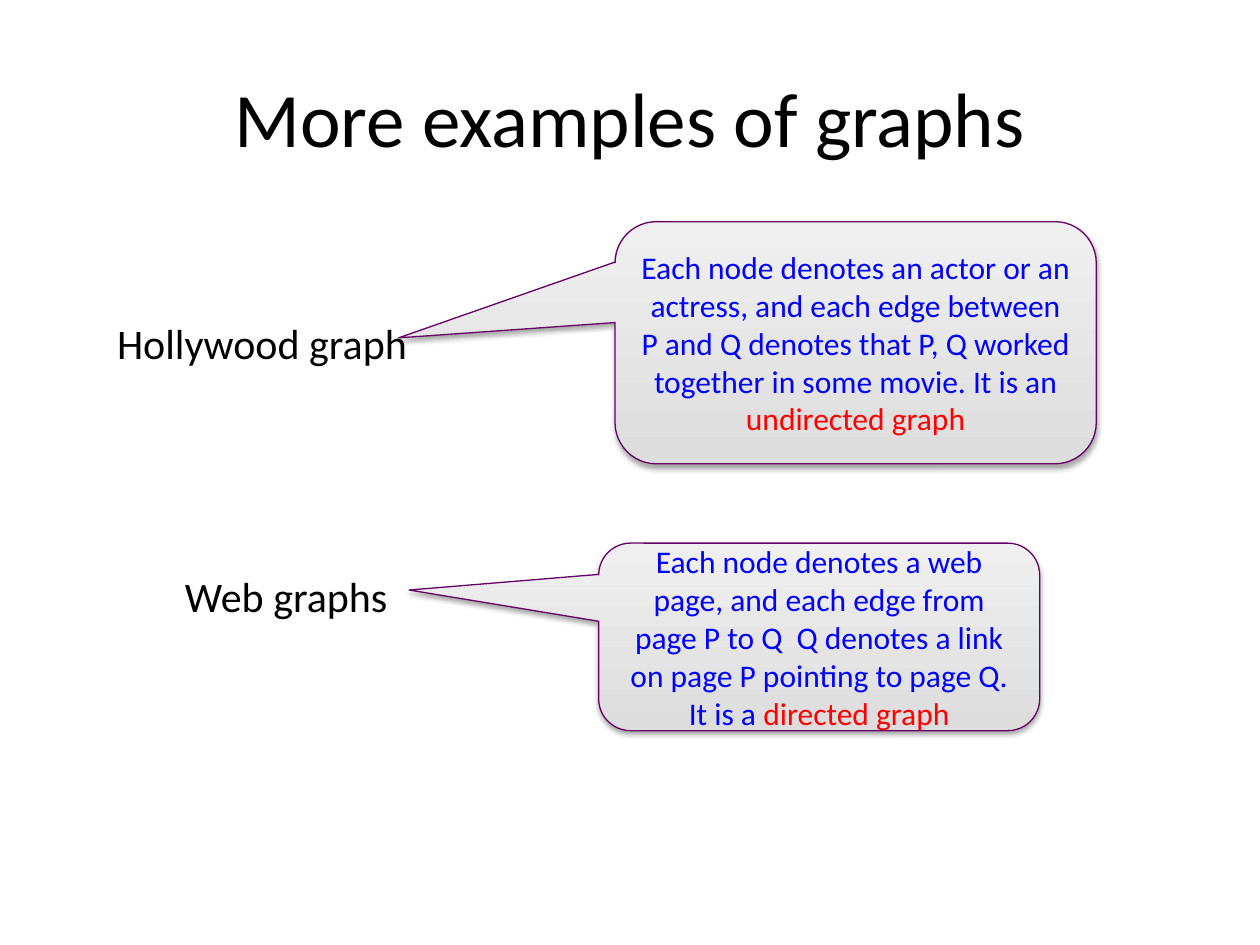
import typing

import pptx
import pptx.dml.color
import pptx.enum.shapes
import pptx.enum.text
import pptx.oxml
import pptx.oxml.ns
import pptx.util

Cm = pptx.util.Cm
Pt = pptx.util.Pt
RGBColor = pptx.dml.color.RGBColor
Align = pptx.enum.text.PP_ALIGN
Anchor = pptx.enum.text.MSO_ANCHOR

BLACK = RGBColor(0x00, 0x00, 0x00)
BLUE = RGBColor(0x00, 0x00, 0xFF)
RED = RGBColor(0xFF, 0x00, 0x00)
PURPLE = RGBColor(0x66, 0x00, 0x66)
DARK = RGBColor(0xDD, 0xDD, 0xDD)
LIGHT = RGBColor(0xEF, 0xEF, 0xEF)
FONT = "Calibri"

SHADOW = (
    f'<a:outerShdw {pptx.oxml.ns.nsdecls("a")} blurRad="40000" dist="23000" '
    'dir="5400000" rotWithShape="0"><a:srgbClr val="000000">'
    '<a:alpha val="35000"/></a:srgbClr></a:outerShdw>'
)


class Box(typing.NamedTuple):
    """Left, top, width and height in centimetres."""
    left: float
    top: float
    width: float
    height: float


class Label(typing.NamedTuple):
    text: str
    box: Box


class Callout(typing.NamedTuple):
    box: Box
    tip: tuple[float, float]
    paras: list[list[tuple[str, RGBColor]]]


LABELS = [
    Label("Hollywood graph", Box(2.11, 6.27, 6.43, 2.06)),
    Label("Web graphs", Box(3.48, 11.38, 4.62, 1.27)),
]

CALLOUTS = [
    Callout(Box(12.4, 4.47, 9.7, 4.88), (-0.95, -0.02), [
        [("Each node denotes an actor or an actress, and each edge between "
          "P and Q denotes that P, Q worked together in some movie. It is an ",
          BLUE),
         ("undirected graph", RED)],
    ]),
    Callout(Box(12.07, 10.95, 8.89, 3.78), (-0.93, -0.25), [
        [("Each node denotes a web page, and each edge from page P to Q  Q "
          "denotes a link on page P pointing to page Q.", BLUE)],
        [("It is a ", BLUE), ("directed graph", RED)],
    ]),
]


def style(run, size: float, color: RGBColor) -> None:
    run.font.name = FONT
    run.font.size = Pt(size)
    run.font.color.rgb = color


def add_title(slide, text: str, box: Box) -> None:
    title = slide.shapes.title
    title.left, title.top, title.width, title.height = map(Cm, box)
    frame = title.text_frame
    frame.text = text
    frame.vertical_anchor = Anchor.MIDDLE
    para = frame.paragraphs[0]
    para.alignment = Align.CENTER
    style(para.runs[0], 44, BLACK)


def add_label(slide, label: Label) -> None:
    frame = slide.shapes.add_textbox(*map(Cm, label.box)).text_frame
    frame.word_wrap = False
    frame.text = label.text
    style(frame.paragraphs[0].runs[0], 24, BLACK)


def add_callout(slide, call: Callout) -> None:
    shape = slide.shapes.add_shape(
        pptx.enum.shapes.MSO_SHAPE.ROUNDED_RECTANGULAR_CALLOUT,
        *map(Cm, call.box))
    for i, value in enumerate((*call.tip, 0.17)):
        shape.adjustments[i] = value

    # Grey gradient, darker at the bottom
    shape.fill.gradient()
    shape.fill.gradient_angle = 90
    for stop, place, color in zip(shape.fill.gradient_stops, (0, 1),
                                  (DARK, LIGHT)):
        stop.position = place
        stop.color.rgb = color
    shape.line.color.rgb = PURPLE
    shape.line.width = Pt(0.75)

    # Soft shadow below
    shape.shadow.inherit = False
    effects = shape._element.spPr.find(pptx.oxml.ns.qn("a:effectLst"))
    effects.append(pptx.oxml.parse_xml(SHADOW))

    # Text with the graph type in red
    frame = shape.text_frame
    frame.word_wrap = True
    frame.vertical_anchor = Anchor.MIDDLE
    for i, parts in enumerate(call.paras):
        para = frame.add_paragraph() if i else frame.paragraphs[0]
        para.alignment = Align.CENTER
        for text, color in parts:
            run = para.add_run()
            run.text = text
            style(run, 18, color)


def main() -> None:
    deck = pptx.Presentation()
    deck.slide_width, deck.slide_height = Cm(25.4), Cm(19.05)
    slide = deck.slides.add_slide(deck.slide_layouts[5])
    add_title(slide, "More examples of graphs", Box(1.27, 0.76, 22.86, 3.18))
    for call in CALLOUTS:
        add_callout(slide, call)
    for label in LABELS:
        add_label(slide, label)
    deck.save("out.pptx")


if __name__ == "__main__":
    main()
